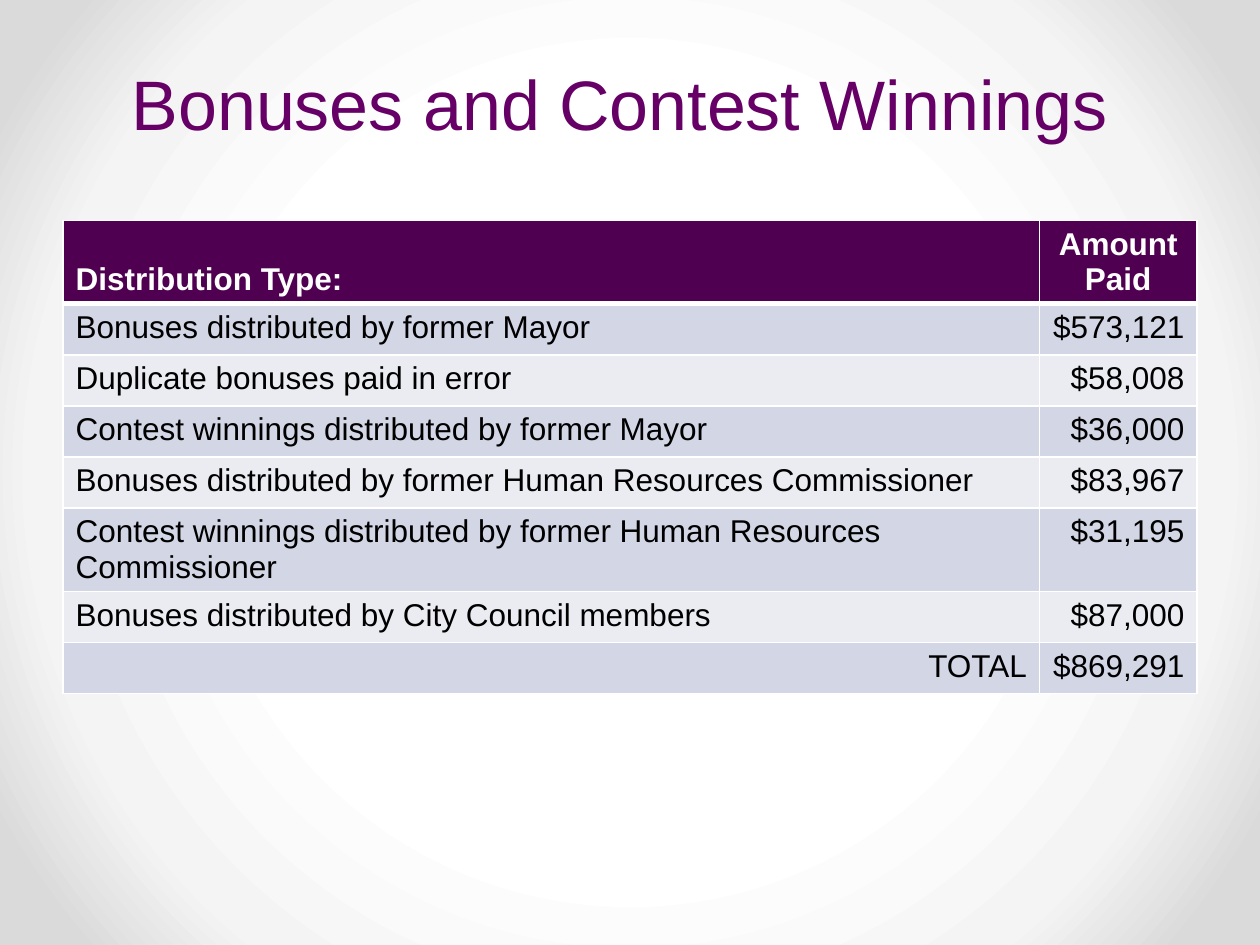
from dataclasses import dataclass

from pptx import Presentation
from pptx.dml.color import RGBColor
from pptx.enum.text import MSO_ANCHOR, PP_ALIGN
from pptx.oxml import parse_xml
from pptx.oxml.ns import nsdecls
from pptx.util import Pt

LEFT, CENTER, RIGHT = PP_ALIGN.LEFT, PP_ALIGN.CENTER, PP_ALIGN.RIGHT
TOP, BOTTOM = MSO_ANCHOR.TOP, MSO_ANCHOR.BOTTOM

FONT = "Arial"
COLORS = {
    "title": "660066",
    "header": "500050",
    "band_dark": "D2D6E5",
    "band_light": "EAECF2",
    "text": "000000",
    "white": "FFFFFF",
    "bg_mid": "F4F4F4",
    "bg_edge": "DADADA",
}
BG_STOPS = [(50, "white"), (76, "bg_mid"), (92, "bg_edge")]
COL_WIDTHS = [558, 90]
HEADER_HEIGHT, ROW_HEIGHT = 46.8, 29.2


@dataclass
class Row:
    label: str
    amount: str
    label_align: PP_ALIGN = LEFT


HEADER = Row("Distribution Type:", "Amount Paid")
ROWS = [
    Row("Bonuses distributed by former Mayor", "$573,121"),
    Row("Duplicate bonuses paid in error", "$58,008"),
    Row("Contest winnings distributed by former Mayor", "$36,000"),
    Row("Bonuses distributed by former Human Resources Commissioner", "$83,967"),
    Row("Contest winnings distributed by former Human Resources Commissioner", "$31,195"),
    Row("Bonuses distributed by City Council members", "$87,000"),
    Row("TOTAL", "$869,291", RIGHT),
]


def write(tf, text: str, *, size=18, color="text", bold=False, align=LEFT, spacing=None) -> None:
    p = tf.paragraphs[0]
    p.alignment = align
    if spacing:
        p.line_spacing = Pt(spacing)
    r = p.add_run()
    r.text = text
    r.font.name = FONT
    r.font.size = Pt(size)
    r.font.bold = bold
    r.font.color.rgb = RGBColor.from_string(COLORS[color])


def set_background(s) -> None:
    stops = "".join(
        f'<a:gs pos="{pos * 1000}"><a:srgbClr val="{COLORS[name]}"/></a:gs>'
        for pos, name in BG_STOPS
    )
    s.element.cSld.insert(0, parse_xml(
        f'<p:bg {nsdecls("p", "a")}><p:bgPr><a:gradFill rotWithShape="1">'
        f'<a:gsLst>{stops}</a:gsLst><a:path path="circle">'
        '<a:fillToRect l="50000" t="50000" r="50000" b="50000"/></a:path>'
        '</a:gradFill><a:effectLst/></p:bgPr></p:bg>'
    ))


def set_borders(cell, **widths: float) -> None:
    tcPr = cell._tc.get_or_add_tcPr()
    for i, side in enumerate("LRTB"):
        tcPr.insert(i, parse_xml(
            f'<a:ln{side} {nsdecls("a")} w="{Pt(widths.get(side, 1))}"><a:solidFill>'
            f'<a:srgbClr val="{COLORS["white"]}"/></a:solidFill></a:ln{side}>'
        ))


def fill_row(cells, row: Row, fill: str, *, amount_align=RIGHT, anchor=TOP,
             borders: dict[str, float], **style) -> None:
    texts = [(row.label, row.label_align), (row.amount, amount_align)]
    for cell, (text, align) in zip(cells, texts):
        set_borders(cell, **borders)
        cell.fill.solid()
        cell.fill.fore_color.rgb = RGBColor.from_string(COLORS[fill])
        cell.vertical_anchor = anchor
        write(cell.text_frame, text, align=align, **style)


def add_title(s) -> None:
    sp = s.shapes.title
    sp.left, sp.top, sp.width, sp.height = Pt(30), Pt(30), Pt(648), Pt(114)
    tf = sp.text_frame
    tf.word_wrap = True
    tf.vertical_anchor = BOTTOM
    tf.margin_bottom = Pt(61.6)  # one line of space under the title
    write(tf, "Bonuses and Contest Winnings", size=40, color="title",
          align=CENTER, spacing=58)


def add_bonus_table(s) -> None:
    height = HEADER_HEIGHT + ROW_HEIGHT * len(ROWS)
    table = s.shapes.add_table(len(ROWS) + 1, len(COL_WIDTHS), Pt(36), Pt(126),
                               Pt(sum(COL_WIDTHS)), Pt(height)).table
    for col, width in zip(table.columns, COL_WIDTHS):
        col.width = Pt(width)
    for i, row in enumerate(table.rows):
        row.height = Pt(ROW_HEIGHT if i else HEADER_HEIGHT)

    # Header, then alternating bands
    fill_row(table.rows[0].cells, HEADER, "header", amount_align=CENTER, anchor=BOTTOM,
             borders={"B": 3}, color="white", bold=True)
    for i, row in enumerate(ROWS):
        fill_row(table.rows[i + 1].cells, row, "band_light" if i % 2 else "band_dark",
                 borders={"T": 1 if i else 3})


def main() -> None:
    prs = Presentation()
    prs.slide_width, prs.slide_height = Pt(720), Pt(540)
    s = prs.slides.add_slide(prs.slide_layouts[5])
    set_background(s)
    add_title(s)
    add_bonus_table(s)
    prs.save("out.pptx")


if __name__ == "__main__":
    main()
